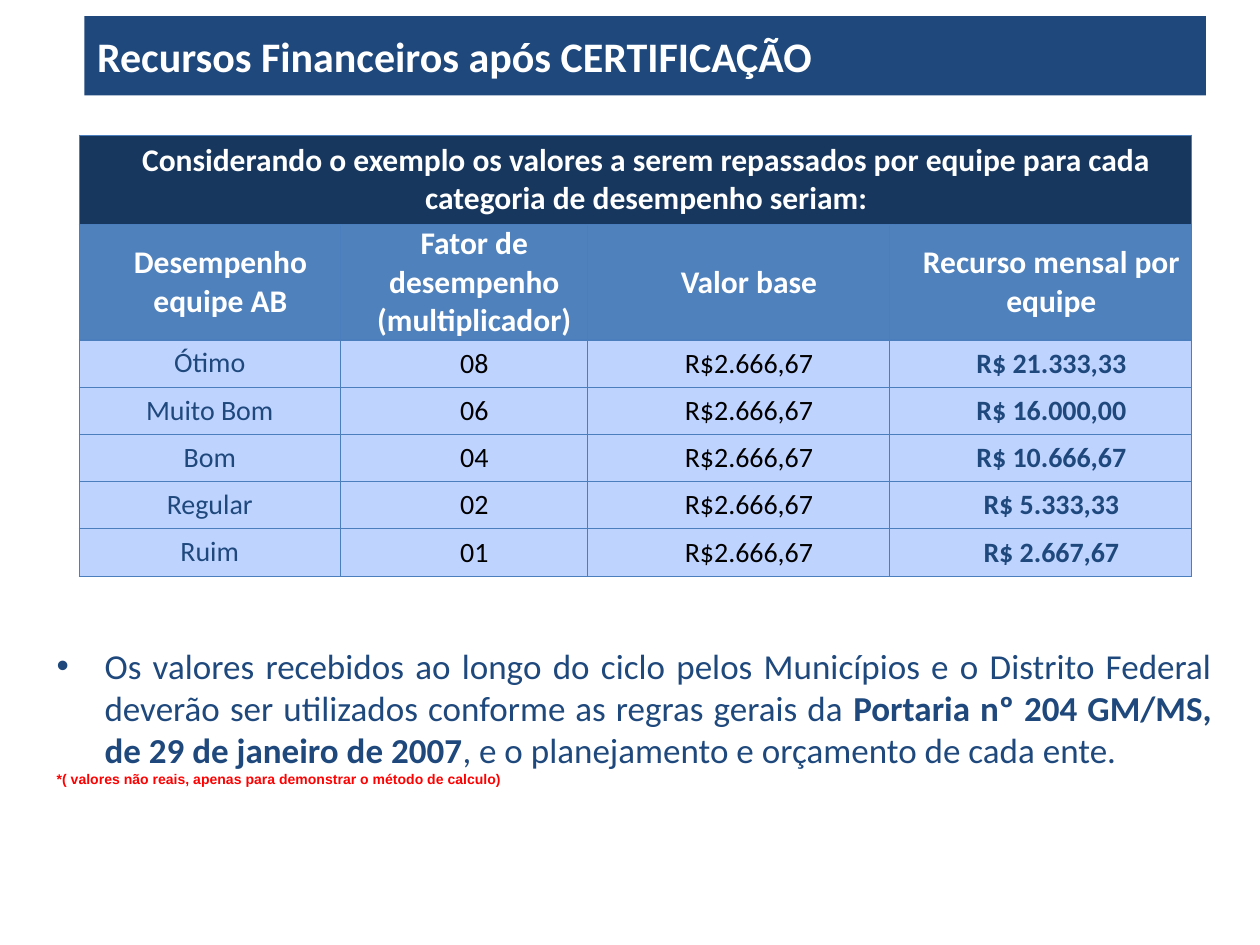
from lxml.etree import SubElement
from pptx import Presentation
from pptx.dml.color import RGBColor
from pptx.enum.text import MSO_ANCHOR, MSO_AUTO_SIZE, PP_ALIGN
from pptx.oxml.ns import qn
from pptx.util import Inches, Pt

THEME = {
    "navy": "1F497D", "dark": "17375E", "blue": "4F81BD", "pale": "BFD3FF",
    "edge": "4B7EBC", "white": "FFFFFF", "black": "000000", "red": "FF0000",
    "title": 24, "head": 18, "cell": 16, "body": 20, "note": 8,
}
W, H = Inches(10), Inches(7.5)


def write(para, text, size, color, bold=False, font="Calibri",
          align=PP_ALIGN.CENTER, left=0, hang=0, bullet=None):
    """Fill a paragraph; each | in the text switches bold on or off."""
    props = para._p.get_or_add_pPr()
    props.set("marL", str(Inches(left)))
    props.set("indent", str(Inches(-hang)))
    if bullet:
        SubElement(props, qn("a:buFont"), typeface="Arial")
        SubElement(props, qn("a:buChar"), char=bullet)
    else:
        SubElement(props, qn("a:buNone"))
    para.alignment = align
    para.space_before = Pt(0)
    for i, part in enumerate(text.split("|")):
        run = para.add_run()
        run.text = part
        run.font.name = font
        run.font.size = Pt(THEME[size])
        run.font.bold = bold != (i % 2 == 1)
        run.font.color.rgb = RGBColor.from_string(THEME[color])


def place(shape, x, y, w, h):
    """Set the frame of a shape in percent of the slide."""
    shape.left, shape.width = int(W * x / 100), int(W * w / 100)
    shape.top, shape.height = int(H * y / 100), int(H * h / 100)


deck = Presentation()
deck.slide_width, deck.slide_height = W, H
slide = deck.slides.add_slide(deck.slide_layouts[1])

# Title bar
title = slide.shapes.title
place(title, 6.7, 1.7, 89, 8.4)
title.fill.solid()
title.fill.fore_color.rgb = RGBColor.from_string(THEME["navy"])
frame = title.text_frame
frame.auto_size = MSO_AUTO_SIZE.NONE
frame.vertical_anchor = MSO_ANCHOR.MIDDLE
write(frame.paragraphs[0], "Recursos Financeiros após CERTIFICAÇÃO",
      "title", "white", bold=True, align=PP_ALIGN.JUSTIFY)

# Body text and footnote
body = slide.placeholders[1]
place(body, 3.5, 67.5, 93.7, 21)
frame = body.text_frame
frame.auto_size = MSO_AUTO_SIZE.NONE
write(frame.paragraphs[0],
      "Os valores recebidos ao longo do ciclo pelos Municípios e o Distrito "
      "Federal deverão ser utilizados conforme as regras gerais da |Portaria "
      "nº 204 GM/MS, de 29 de janeiro de 2007|, e o planejamento e orçamento "
      "de cada ente.", "body", "navy", align=PP_ALIGN.JUSTIFY,
      left=0.38, hang=0.38, bullet="•")
write(frame.add_paragraph(),
      "*( valores não reais, apenas para demonstrar o método de calculo)",
      "note", "red", bold=True, font="Arial", align=PP_ALIGN.JUSTIFY)

# Table of payments
base = "R$2.666,67"
rows = [
    ["Considerando o exemplo os valores a serem repassados por equipe "
     "para cada categoria de desempenho seriam:", "", "", ""],
    ["Desempenho equipe AB", "Fator de desempenho (multiplicador)",
     "Valor base", "Recurso mensal por equipe"],
    ["Ótimo", "08", base, "R$ 21.333,33"],
    ["Muito Bom", "06", base, "R$ 16.000,00"],
    ["Bom", "04", base, "R$ 10.666,67"],
    ["Regular", "02", base, "R$ 5.333,33"],
    ["Ruim", "01", base, "R$ 2.667,67"],
]
wide = [20.7, 19.6, 24, 24]
high = [9.47, 12, 5.07, 4.87, 4.87, 4.87, 5.07]
holder = slide.shapes.add_table(len(rows), len(wide), 0, 0, W, H)
table = holder.table
for col, share in zip(table.columns, wide):
    col.width = int(W * share / 100)
for row, share in zip(table.rows, high):
    row.height = int(H * share / 100)
place(holder, 6.3, 14.3, sum(wide), sum(high))
table.cell(0, 0).merge(table.cell(0, 3))

for r, row in enumerate(rows):
    for c, text in enumerate(row):
        cell = table.cell(r, c)
        props = cell._tc.get_or_add_tcPr()
        for side in ("lnL", "lnR", "lnT", "lnB"):
            line = SubElement(props, qn("a:" + side), w=str(Pt(0.75)))
            fill = SubElement(line, qn("a:solidFill"))
            SubElement(fill, qn("a:srgbClr"), val=THEME["edge"])
        cell.fill.solid()
        shade = ("dark", "blue")[r] if r < 2 else "pale"
        cell.fill.fore_color.rgb = RGBColor.from_string(THEME[shade])
        label = r > 1 and c == 0
        if not label:
            cell.vertical_anchor = MSO_ANCHOR.MIDDLE
            cell.margin_top = cell.margin_bottom = 0
            pad = 0.04 if c == 0 else 0.07
            cell.margin_left = cell.margin_right = Inches(pad)
        if text:
            color = "white" if r < 2 else "navy" if c in (0, 3) else "black"
            write(cell.text_frame.paragraphs[0], text,
                  "head" if r < 2 else "cell", color,
                  bold=r < 2 or c == 3, left=0 if label else 0.17)

deck.save("out.pptx")
